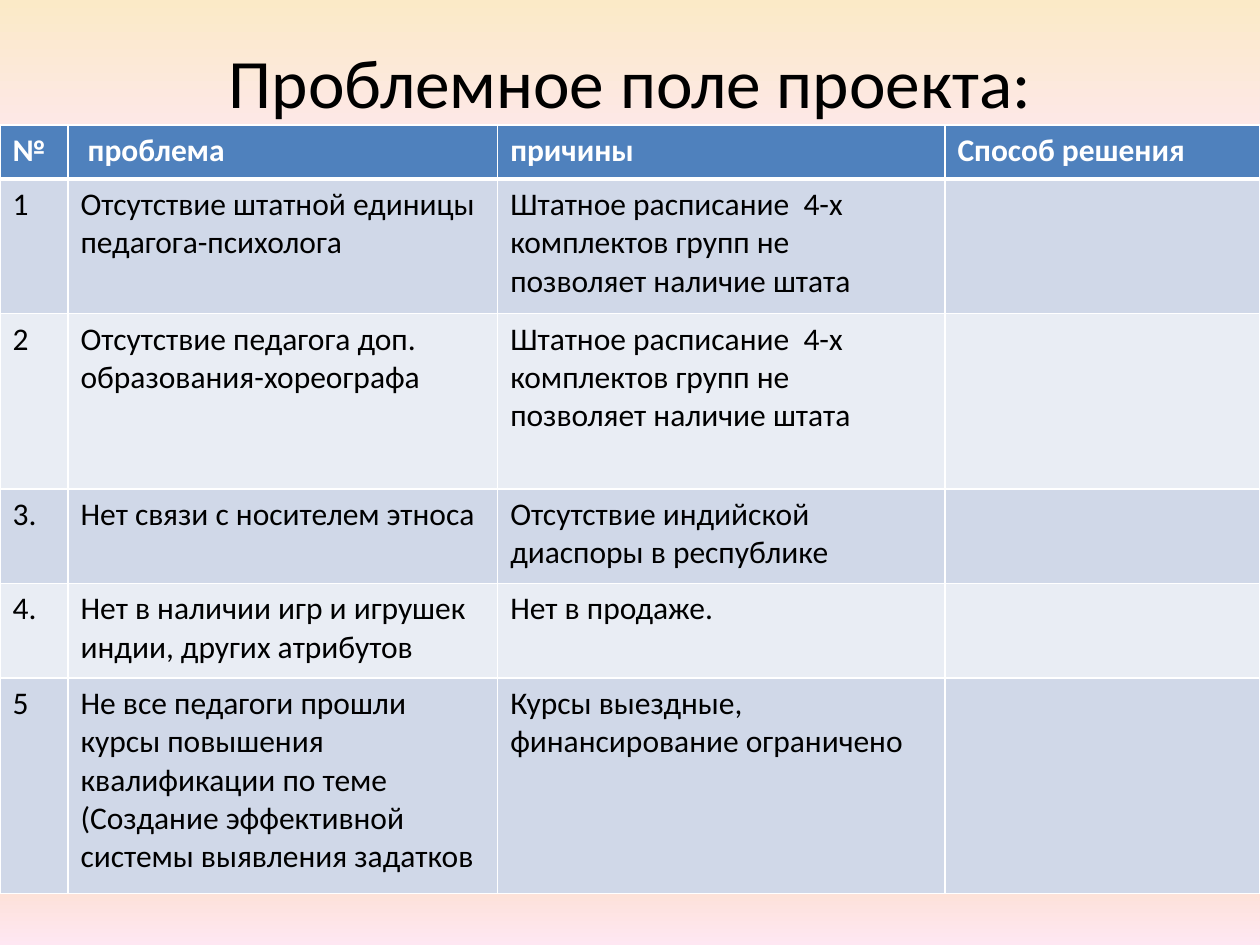
import pptx
import pptx.util
import pptx.dml.color
import pptx.enum.text
import pptx.oxml
import pptx.oxml.ns
import lxml.etree

Inches = pptx.util.Inches
Pt = pptx.util.Pt
RGB = pptx.dml.color.RGBColor
qn = pptx.oxml.ns.qn

BLACK = RGB(0x00, 0x00, 0x00)
WHITE = RGB(0xFF, 0xFF, 0xFF)
BLUE = RGB(0x4F, 0x81, 0xBD)
DARK = RGB(0xD0, 0xD8, 0xE8)
LIGHT = RGB(0xE9, 0xED, 0xF4)
CREAM = RGB(0xFB, 0xEA, 0xC7)
PINK = RGB(0xFE, 0xE7, 0xF2)
AMBER = RGB(0xFA, 0xC7, 0x7D)
CORAL = RGB(0xFB, 0xA9, 0x7D)
SAND = RGB(0xFB, 0xD4, 0x9C)

STOPS = [(0, CREAM), (18, PINK), (36, AMBER), (61, CORAL), (82, SAND), (100, PINK)]
COLS = [0.54, 3.41, 3.55, 2.5]
ROWS = [0.43, 1.07, 1.39, 0.75, 0.75, 1.71]
STAFF = "Штатное расписание  4-х комплектов групп не позволяет наличие штата"
CELLS = [
    ["№", " проблема", "причины", "Способ решения"],
    ["1", "Отсутствие штатной единицы педагога-психолога", STAFF, ""],
    ["2", "Отсутствие педагога доп. образования-хореографа", STAFF, ""],
    ["3.", "Нет связи с носителем этноса", "Отсутствие индийской диаспоры в республике", ""],
    ["4.", "Нет в наличии игр и игрушек индии, других атрибутов", "Нет в продаже.", ""],
    ["5", "Не все педагоги прошли курсы повышения квалификации по теме  "
          "(Создание эффективной системы выявления задатков",
     "Курсы выездные, финансирование ограничено", ""],
]


def style(font, color, form):
    font.color.rgb = color
    for name, value in form.items():
        setattr(font, name, value)


def edge(cell, side, width):
    line = lxml.etree.SubElement(cell._tc.get_or_add_tcPr(), qn("a:" + side), w=str(Pt(width)))
    fill = lxml.etree.SubElement(line, qn("a:solidFill"))
    lxml.etree.SubElement(fill, qn("a:srgbClr"), val=str(WHITE))


deck = pptx.Presentation()
deck.slide_width = Inches(10)
deck.slide_height = Inches(7.5)
slide = deck.slides.add_slide(deck.slide_layouts[5])

back = slide.background.fill
back.gradient()
back.gradient_angle = 270
stops = slide.element.find(".//" + qn("a:gsLst"))
for stop in list(stops):
    stops.remove(stop)
for place, color in STOPS:
    stop = lxml.etree.SubElement(stops, qn("a:gs"), pos=str(place * 1000))
    lxml.etree.SubElement(stop, qn("a:srgbClr"), val=str(color))

title = slide.shapes.title
box = {"left": 0.5, "top": 0.3, "width": 9, "height": 0.69}
for name, value in box.items():
    setattr(title, name, Inches(value))
frame = title.text_frame
frame.text = "Проблемное поле проекта:"
frame.vertical_anchor = pptx.enum.text.MSO_ANCHOR.MIDDLE
line = frame.paragraphs[0]
line.alignment = pptx.enum.text.PP_ALIGN.CENTER
style(line.runs[0].font, BLACK, {"name": "Calibri", "size": Pt(39.6)})

table = slide.shapes.add_table(
    len(ROWS), len(COLS), Inches(0), Inches(0.99), Inches(sum(COLS)), Inches(sum(ROWS))
).table
for col, width in zip(table.columns, COLS):
    col.width = Inches(width)
for row, height in zip(table.rows, ROWS):
    row.height = Inches(height)

for r, texts in enumerate(CELLS):
    head = r == 0
    shade = BLUE if head else DARK if r % 2 else LIGHT
    form = {"name": "Calibri", "size": Pt(18), "bold": head}
    for c, text in enumerate(texts):
        cell = table.cell(r, c)
        for side in ("lnL", "lnR", "lnT", "lnB"):
            thick = (head and side == "lnB") or (r == 1 and side == "lnT")
            edge(cell, side, 3 if thick else 1)
        cell.fill.solid()
        cell.fill.fore_color.rgb = shade
        cell.text = text
        style(cell.text_frame.paragraphs[0].font, WHITE if head else BLACK, form)
        for run in cell.text_frame.paragraphs[0].runs:
            style(run.font, WHITE if head else BLACK, form)

deck.save("out.pptx")
